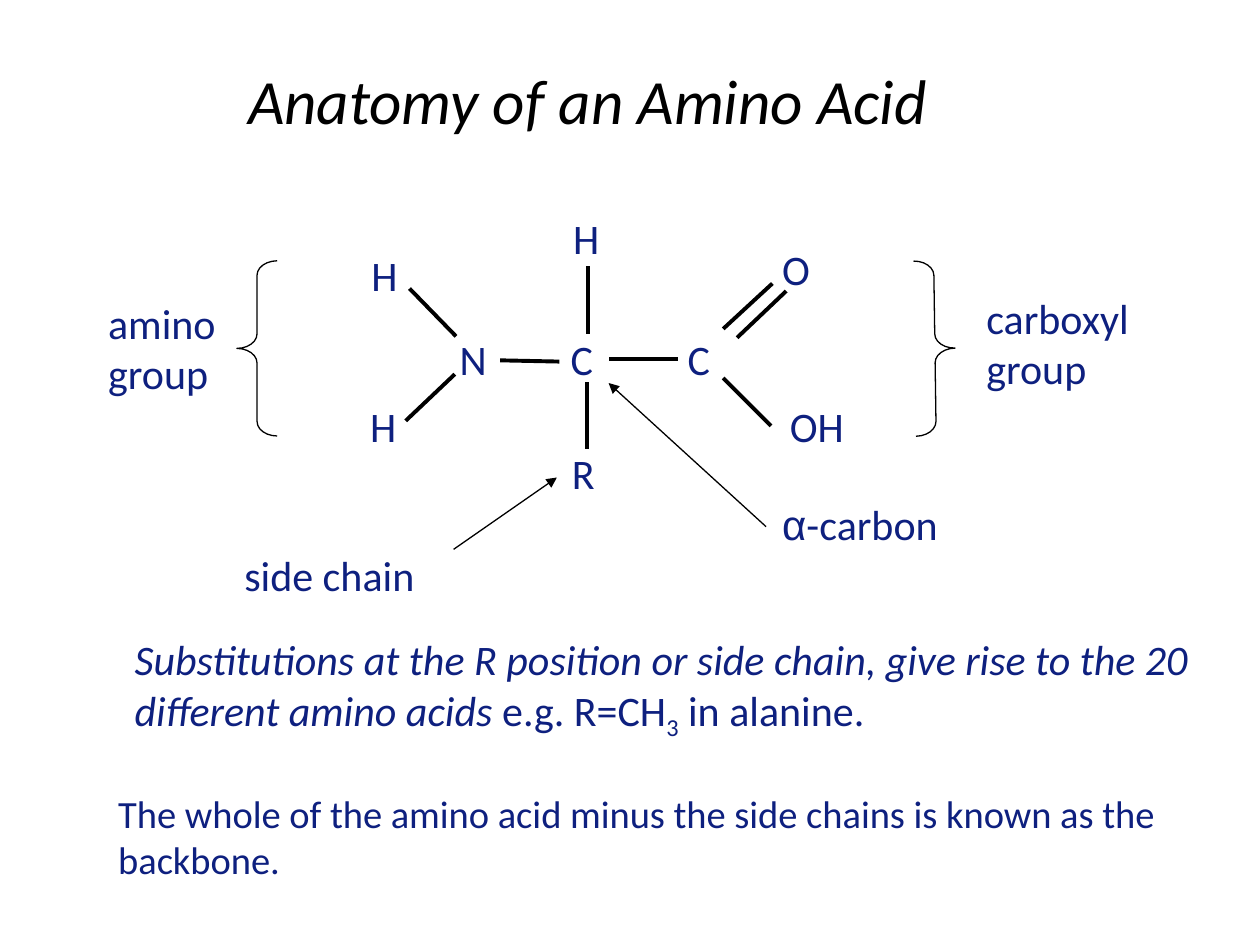
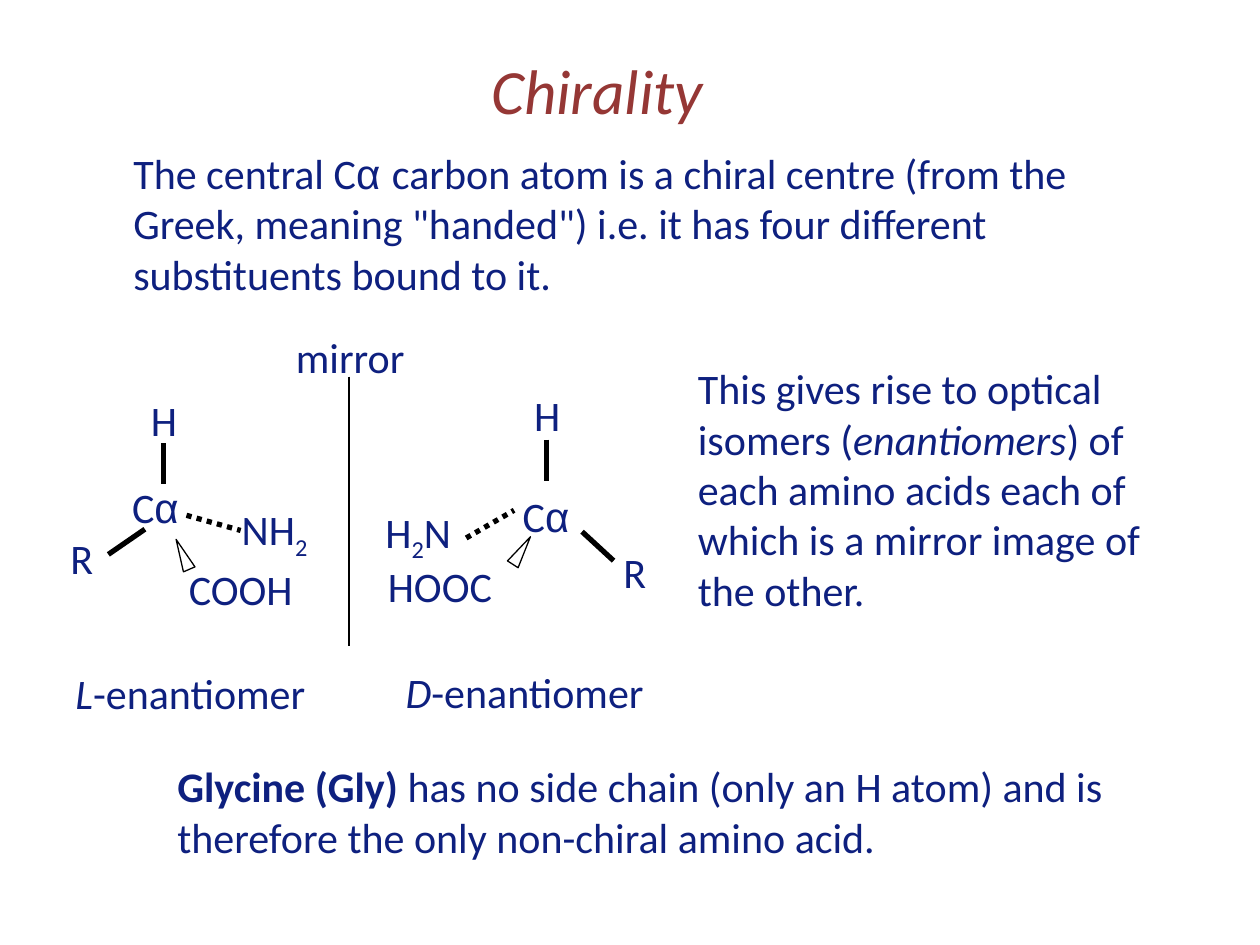
from lxml import etree
from pptx import Presentation
from pptx import util as u
from pptx.dml.color import RGBColor
from pptx.enum import dml, shapes
from pptx.oxml.ns import qn

PX = 9144  # 100 px to the inch
INK, BLACK, WHITE, RUST = "0E207F", "000000", "FFFFFF", "953735"
ITALIC, BOLD = {"italic": True}, {"bold": True}
SUBSCRIPT = {"baseline": "-25000"}
GREEK = {"name": "Arial"}
ALPHA = ("α", GREEK)
ATOM = (44, 50)
BOND, HEAVY_BOND, THIN = 2.25, 3, 0.75


def px(*lengths):
    return [u.Emu(length * PX) for length in lengths]


def colour(value):
    return RGBColor.from_string(value)


def shift(box, point):
    return box[0] + point[0], box[1] + point[1]


def add_text(page, at, extent, *paragraphs, **base):
    """Each paragraph is a list of strings or (string, format) pairs."""
    frame = page.shapes.add_textbox(*px(*at, *extent)).text_frame
    frame.word_wrap = True
    for index, pieces in enumerate(paragraphs):
        para = frame.add_paragraph() if index else frame.paragraphs[0]
        for piece in pieces:
            words, extra = (piece, {}) if isinstance(piece, str) else piece
            style = {"name": "Calibri", "size": 24, "colour": INK, **base, **extra}
            span = para.add_run()
            span.text = words
            span.font.size = u.Pt(style.pop("size"))
            span.font.color.rgb = colour(style.pop("colour"))
            if "baseline" in style:
                span.font._element.set("baseline", style.pop("baseline"))
            for name, value in style.items():
                setattr(span.font, name, value)


def add_title(page, at, extent, words, shade):
    add_text(page, at, extent, [words], size=36, colour=shade, italic=True)


def add_line(page, start, end, width, dash=None, arrow=False):
    line = page.shapes.add_connector(
        shapes.MSO_CONNECTOR.STRAIGHT, *px(*start, *end))
    line.line.color.rgb = colour(BLACK)
    line.line.width = u.Pt(width)
    if dash:
        line.line.dash_style = dash
    if arrow:
        etree.SubElement(line.line._get_or_add_ln(), qn("a:tailEnd"), type="triangle")
    etree.SubElement(line._element.spPr, qn("a:effectLst"))


def add_outline(page, kind, at, extent, rotation=0, fill=None):
    shape = page.shapes.add_shape(kind, *px(*at, *extent))
    shape.shadow.inherit = False
    shape.rotation = rotation
    shape.line.color.rgb = colour(BLACK)
    shape.line.width = u.Pt(THIN)
    if fill:
        shape.fill.solid()
        shape.fill.fore_color.rgb = colour(fill)
    else:
        shape.fill.background()
    return shape


def amino_acid(page, box):
    atoms = [("N", 71, 96), ("C", 159, 96), ("C", 252, 96), ("O", 327, 24),
             ("R", 160, 186), ("H", 1, 29), ("H", 161, 0), ("H", 0, 149)]
    for name, *point in atoms:
        add_text(page, shift(box, point), ATOM, [name])
    add_text(page, shift(box, (333, 149)), (70, 50), ["OH"])
    bonds = [((290, 97), (329, 61)), ((301, 104), (340, 67)),
             ((38, 170), (77, 133)), ((78, 103), (41, 65)),
             ((328, 174), (290, 136)), ((160, 123), (113, 122)),
             ((254, 121), (199, 121)), ((183, 101), (183, 47)),
             ((182, 192), (182, 139))]
    for start, end in bonds:
        add_line(page, shift(box, start), shift(box, end), BOND)


def amino_acid_labels(page, box):
    for left, rotation in ((112, 0), (650, 179.2)):
        brace = add_outline(page, shapes.MSO_SHAPE.LEFT_BRACE,
                            shift(box, (left, 43)), (32, 139), rotation)
        brace.adjustments[0] = 0.36
    labels = [((0, 67), (111, 90), ["amino"], ["group"]),
              ((697, 63), (144, 90), ["carboxyl"], ["group"]),
              ((535, 227), (175, 50), [ALPHA, "-carbon"]),
              ((108, 267), (202, 50), ["side chain"])]
    for point, extent, *paragraphs in labels:
        add_text(page, shift(box, point), extent, *paragraphs)
    for start, end in (((532, 254), (407, 140)), ((284, 272), (366, 215))):
        add_line(page, shift(box, start), shift(box, end), THIN, arrow=True)


def anatomy_slide(page):
    add_title(page, (187, 44), (609, 70), "Anatomy of an Amino Acid", BLACK)
    amino_acid(page, (284, 164))
    amino_acid_labels(page, (76, 164))
    add_text(page, (97, 498), (856, 90), [
        ("Substitutions at the R position or side chain, give rise to the 20 "
         "different amino acids ", ITALIC),
        "e.g. R=CH", ("3", SUBSCRIPT), " in alanine."])
    add_text(page, (84, 622), (870, 83), [
        "The whole of the amino acid minus the side chains is known as the "
        "backbone."], size=22)


def enantiomer(page, box, letter, labels, bonds, dotted_bond, wedge):
    """Draws one chiral molecule; the wedge is its place and its rotation."""
    for point, width, pieces in labels:
        add_text(page, shift(box, point), (width, 50), pieces)
    for start, end in bonds:
        add_line(page, shift(box, start), shift(box, end), HEAVY_BOND)
    start, end = dotted_bond
    add_line(page, shift(box, start), shift(box, end), HEAVY_BOND,
             dash=dml.MSO_LINE.ROUND_DOT)
    point, rotation = wedge
    add_outline(page, shapes.MSO_SHAPE.ISOSCELES_TRIANGLE, shift(box, point),
                (10, 26), rotation, WHITE)
    add_text(page, shift(box, (10, 217)), (222, 50),
             [(letter, ITALIC), "-enantiomer"])


def chirality_slide(page):
    add_title(page, (380, 36), (201, 70), "Chirality", RUST)
    add_text(page, (96, 112), (850, 170), [
        "The central C", ("α ", GREEK),
        "carbon atom is a chiral centre (from the Greek, meaning \"handed\") "
        "i.e. it has four different substituents bound to it."])
    add_text(page, (544, 283), (391, 210), [
        "This gives rise to optical isomers (", ("enantiomers", ITALIC),
        ") of each amino acids each of which is a mirror image of the other."])
    enantiomer(
        page, (40, 308), "L",
        [((70, 0), 44, ["H"]), ((55, 69), 65, ["C", ALPHA]),
         ((6, 110), 44, ["R"]), ((142, 87), 81, ["NH", ("2", SUBSCRIPT)]),
         ((100, 134), 120, ["COOH"])],
        [((46, 132), (75, 112)), ((90, 44), (90, 76))],
        ((108, 101), (151, 113)), ((100, 119), 336.4))
    enantiomer(
        page, (302, 307), "D",
        [((112, -3), 44, ["H"]), ((103, 77), 65, ["C", ALPHA]),
         ((183, 122), 44, ["R"]), ((-6, 90), 81, ["H", ("2", SUBSCRIPT), "N"]),
         ((-4, 133), 120, ["HOOC"])],
        [((132, 42), (132, 75)), ((185, 138), (160, 115))],
        ((68, 120), (106, 98)), ((107, 117), 32.7))
    add_line(page, (277, 299), (277, 513), THIN)
    add_text(page, (225, 258), (107, 50), ["mirror"])
    add_text(page, (131, 599), (764, 90), [
        ("Glycine (Gly)", BOLD),
        " has no side chain (only an H atom) and is therefore the only "
        "non-chiral amino acid."])


def main():
    deck = Presentation()
    deck.slide_width, deck.slide_height = px(1000, 750)
    for draw in (anatomy_slide, chirality_slide):
        draw(deck.slides.add_slide(deck.slide_layouts[6]))
    deck.save("out.pptx")


if __name__ == "__main__":
    main()
